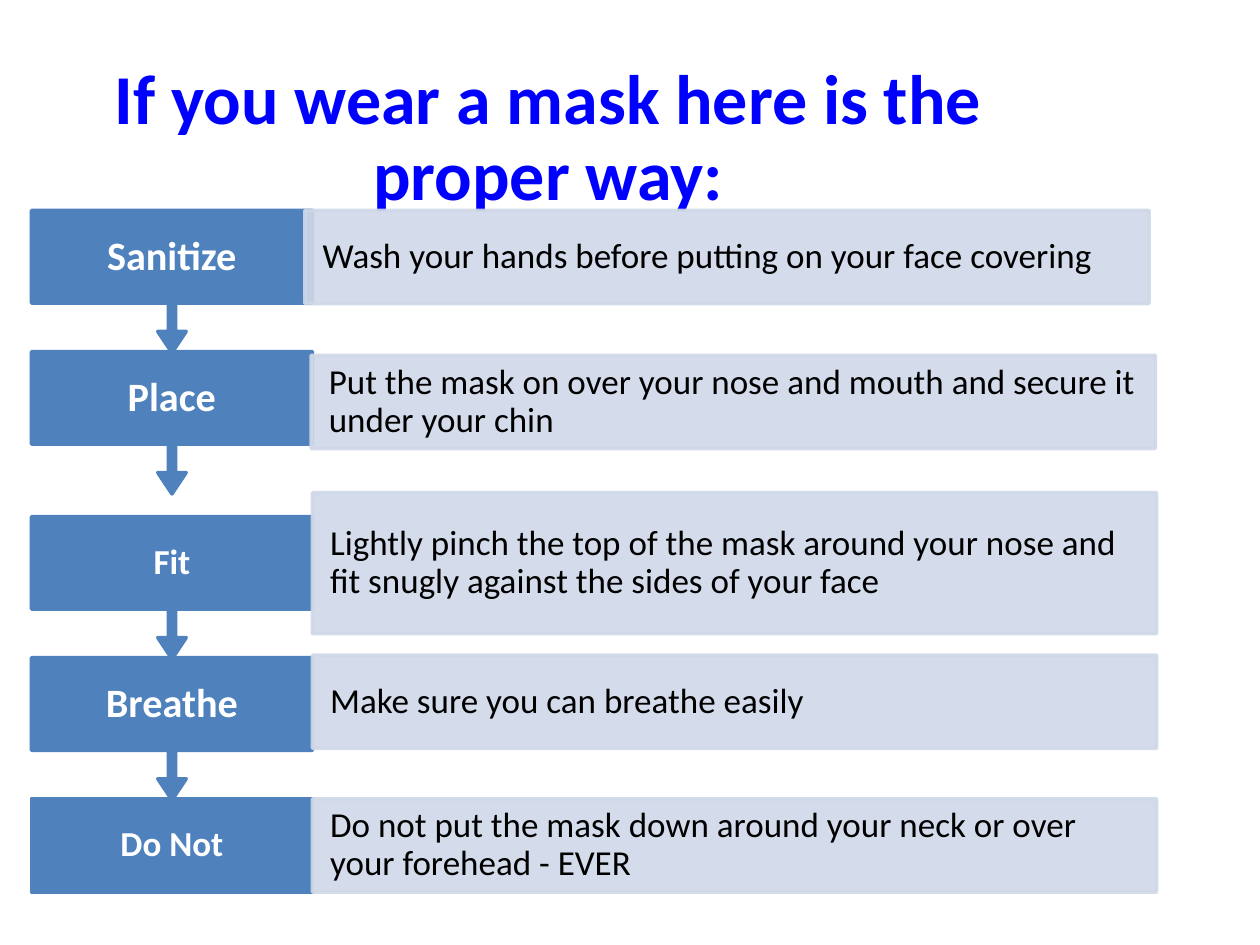
from lxml import etree
from pptx import Presentation
from pptx.dml.color import RGBColor
from pptx.enum.shapes import MSO_SHAPE
from pptx.enum.text import MSO_ANCHOR, PP_ALIGN
from pptx.oxml.ns import qn
from pptx.util import Inches, Pt

TITLE_BLUE = RGBColor(0x00, 0x00, 0xFF)
STEP_BLUE = RGBColor(0x4F, 0x81, 0xBD)
PALE_BLUE = RGBColor(0xD0, 0xD8, 0xE8)
WHITE = RGBColor(0xFF, 0xFF, 0xFF)
BLACK = RGBColor(0x00, 0x00, 0x00)

STEP_LEFT, STEP_WIDTH = 0.25, 2.23
ROW_HEIGHT, CALLOUT_HEIGHT = 0.74, 1.13
DETAIL_WIDTH = 6.7

# label, label size, step top, detail left, detail top, detail height, detail
STEPS = [
    ("Sanitize", 23, 1.67, 2.42, 1.67, ROW_HEIGHT,
     "Wash your hands before putting on your face covering"),
    ("Place", 23, 2.79, 2.47, 2.82, ROW_HEIGHT,
     "Put the mask on over your nose and mouth and secure it under your chin"),
    ("Fit", 20, 4.1, 2.48, 3.91, 1.12,
     "Lightly pinch the top of the mask around your nose and fit snugly "
     "against the sides of your face"),
    ("Breathe", 23, 5.22, 2.48, 5.2, ROW_HEIGHT,
     "Make sure you can breathe easily"),
    ("Do Not", 20, 6.34, 2.48, 6.34, ROW_HEIGHT,
     "Do not put the mask down around your neck or over your forehead - EVER"),
]


def write(shape, text, size, color, bold, align, margin_x, margin_y):
    frame = shape.text_frame
    frame.text = text
    frame.word_wrap = True
    frame.vertical_anchor = MSO_ANCHOR.MIDDLE
    frame.margin_left = frame.margin_right = Inches(margin_x)
    frame.margin_top = frame.margin_bottom = Inches(margin_y)
    paragraph = frame.paragraphs[0]
    paragraph.alignment = align
    paragraph.line_spacing = 0.9
    font = paragraph.runs[0].font
    font.name = "Calibri"
    font.size = Pt(size)
    font.bold = bold
    font.color.rgb = color


def add_block(kind, left, top, width, height, color, opacity=100):
    block = slide.shapes.add_shape(
        kind, Inches(left), Inches(top), Inches(width), Inches(height))
    block.shadow.inherit = False
    block.fill.solid()
    block.fill.fore_color.rgb = color
    block.line.color.rgb = color
    block.line.width = Pt(2)
    if opacity < 100:
        for srgb in block.fill._xPr.iter(qn("a:srgbClr")):
            etree.SubElement(srgb, qn("a:alpha"), val=str(opacity * 1000))
    etree.SubElement(block.line._get_or_add_ln(), qn("a:round"))
    return block


prs = Presentation()
prs.slide_width, prs.slide_height = Inches(10), Inches(7.5)
slide = prs.slides.add_slide(prs.slide_layouts[6])

title = slide.shapes.add_textbox(
    Inches(0.58), Inches(0.42), Inches(7.54), Inches(1.38))
write(title, "If you wear a mask here is the proper way:",
      40, TITLE_BLUE, True, PP_ALIGN.CENTER, 0.1, 0.05)

# Drawn from the last step up, so each arrow tip lies over the next step
for step in reversed(STEPS):
    label, label_size, top, detail_left, detail_top, detail_height, detail = step
    if step is STEPS[-1]:
        add_block(MSO_SHAPE.RECTANGLE, STEP_LEFT, top, STEP_WIDTH,
                  ROW_HEIGHT, STEP_BLUE)
    else:
        callout = add_block(MSO_SHAPE.UP_ARROW_CALLOUT, STEP_LEFT, top,
                            STEP_WIDTH, CALLOUT_HEIGHT, STEP_BLUE)
        callout.rotation = 180
        for index, value in enumerate((0.05, 0.1, 0.15, 0.65)):
            callout.adjustments[index] = value

    # The callouts are upside down, so the labels stand in their own boxes
    label_box = slide.shapes.add_textbox(
        Inches(STEP_LEFT), Inches(top), Inches(STEP_WIDTH), Inches(ROW_HEIGHT))
    write(label_box, label, label_size, WHITE, True, PP_ALIGN.CENTER, 0.16, 0.16)

    detail_box = add_block(MSO_SHAPE.RECTANGLE, detail_left, detail_top,
                           DETAIL_WIDTH, detail_height, PALE_BLUE, opacity=90)
    write(detail_box, detail, 20, BLACK, False, PP_ALIGN.LEFT, 0.14, 0.28)

prs.save("out.pptx")
